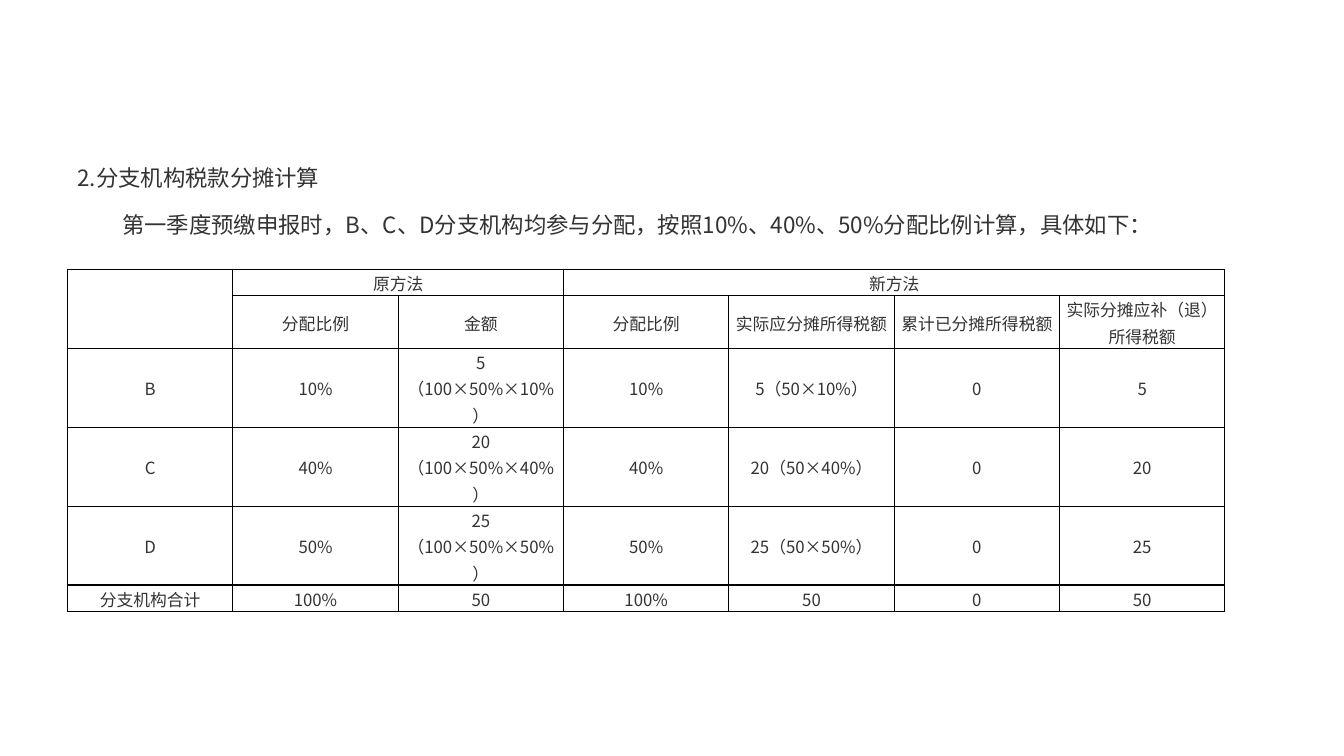
import dataclasses

import lxml.etree
import pptx
import pptx.dml.color
import pptx.enum.text
import pptx.oxml.ns
import pptx.util

FONT = "Noto Sans CJK SC"
TEXT_COLOUR = "333333"
BORDER_COLOUR = "000000"
LINE_PITCH = pptx.util.Pt(18.8)
LINE_HEIGHT = 0.26
COLUMN_WIDTH = 1.64
TABLE_LEFT, TABLE_TOP = 0.67, 2.67


@dataclasses.dataclass
class Branch:
    name: str
    share: int
    amount: int

    def row(self) -> list[str]:
        return [
            self.name,
            f"{self.share}%",
            f"{self.amount}（100×50%×{self.share}%）",
            f"{self.share}%",
            f"{self.amount}（50×{self.share}%）",
            "0",
            str(self.amount),
        ]


@dataclasses.dataclass
class Span:
    first: tuple[int, int]
    last: tuple[int, int]


BRANCHES = [Branch("B", 10, 5), Branch("C", 40, 20), Branch("D", 50, 25)]
ROWS = [
    ["", "原方法", "", "新方法", "", "", ""],
    ["", "分配比例", "金额", "分配比例", "实际应分摊所得税额",
     "累计已分摊所得税额", "实际分摊应补（退）所得税额"],
    *[branch.row() for branch in BRANCHES],
    ["分支机构合计", "100%", "50", "100%", "50", "0", "50"],
]
ROW_LINES = [1, 2, 3, 3, 3, 1]
SPANS = [Span((0, 0), (1, 0)), Span((0, 1), (0, 2)), Span((0, 3), (0, 6))]


def colour(value: str) -> pptx.dml.color.RGBColor:
    return pptx.dml.color.RGBColor.from_string(value)


def add_run(paragraph, text: str, size: float) -> None:
    run = paragraph.add_run()
    run.text = text
    run.font.size = pptx.util.Pt(size)
    run.font.bold = False
    run.font.name = FONT
    run.font.color.rgb = colour(TEXT_COLOUR)
    east_asian = lxml.etree.SubElement(run.font._element, pptx.oxml.ns.qn("a:ea"))
    east_asian.set("typeface", FONT)


def add_borders(cell) -> None:
    properties = cell._tc.get_or_add_tcPr()
    for side in ("lnL", "lnR", "lnT", "lnB"):
        line = lxml.etree.SubElement(properties, pptx.oxml.ns.qn(f"a:{side}"))
        line.set("w", str(pptx.util.Pt(1)))
        fill = lxml.etree.SubElement(line, pptx.oxml.ns.qn("a:solidFill"))
        tint = lxml.etree.SubElement(fill, pptx.oxml.ns.qn("a:srgbClr"))
        tint.set("val", BORDER_COLOUR)


def fill_cell(cell, text: str) -> None:
    cell.margin_left = cell.margin_right = pptx.util.Inches(0.07)
    cell.margin_top = cell.margin_bottom = 0
    cell.vertical_anchor = pptx.enum.text.MSO_ANCHOR.MIDDLE
    add_borders(cell)
    cell.fill.background()
    paragraph = cell.text_frame.paragraphs[0]
    paragraph.alignment = pptx.enum.text.PP_ALIGN.CENTER
    paragraph.line_spacing = LINE_PITCH
    if text:
        add_run(paragraph, text, 12)


def add_introduction(slide) -> None:
    introduction = slide.shapes.add_textbox(
        pptx.util.Inches(0.67), pptx.util.Inches(1.58),
        pptx.util.Inches(10.95), pptx.util.Inches(0.84))
    frame = introduction.text_frame
    frame.word_wrap = True
    frame.auto_size = pptx.enum.text.MSO_AUTO_SIZE.SHAPE_TO_FIT_TEXT
    heading = frame.paragraphs[0]
    explanation = frame.add_paragraph()
    for paragraph, text in (
        (heading, "2.分支机构税款分摊计算"),
        (explanation, "第一季度预缴申报时，B、C、D分支机构均参与分配，"
                      "按照10%、40%、50%分配比例计算，具体如下："),
    ):
        paragraph.alignment = pptx.enum.text.PP_ALIGN.JUSTIFY
        paragraph.line_spacing = LINE_PITCH
        paragraph.space_before = pptx.util.Pt(15)
        add_run(paragraph, text, 16)
    properties = explanation._p.get_or_add_pPr()
    properties.set("marL", "0")
    properties.set("indent", str(pptx.util.Pt(32)))


def add_allocation(slide) -> None:
    allocation = slide.shapes.add_table(
        len(ROWS), len(ROWS[0]),
        pptx.util.Inches(TABLE_LEFT), pptx.util.Inches(TABLE_TOP),
        pptx.util.Inches(COLUMN_WIDTH * len(ROWS[0])),
        pptx.util.Inches(LINE_HEIGHT * sum(ROW_LINES))).table
    allocation.first_row = False
    allocation.horz_banding = False
    for column in allocation.columns:
        column.width = pptx.util.Inches(COLUMN_WIDTH)
    for row, lines in zip(allocation.rows, ROW_LINES):
        row.height = pptx.util.Inches(LINE_HEIGHT * lines)
    for row, texts in zip(allocation.rows, ROWS):
        for cell, text in zip(row.cells, texts):
            fill_cell(cell, text)
    for span in SPANS:
        allocation.cell(*span.first).merge(allocation.cell(*span.last))


def main() -> None:
    presentation = pptx.Presentation()
    presentation.slide_width = pptx.util.Inches(13.33)
    presentation.slide_height = pptx.util.Inches(7.5)
    slide = presentation.slides.add_slide(presentation.slide_layouts[6])
    add_introduction(slide)
    add_allocation(slide)
    presentation.save("out.pptx")


if __name__ == "__main__":
    main()
